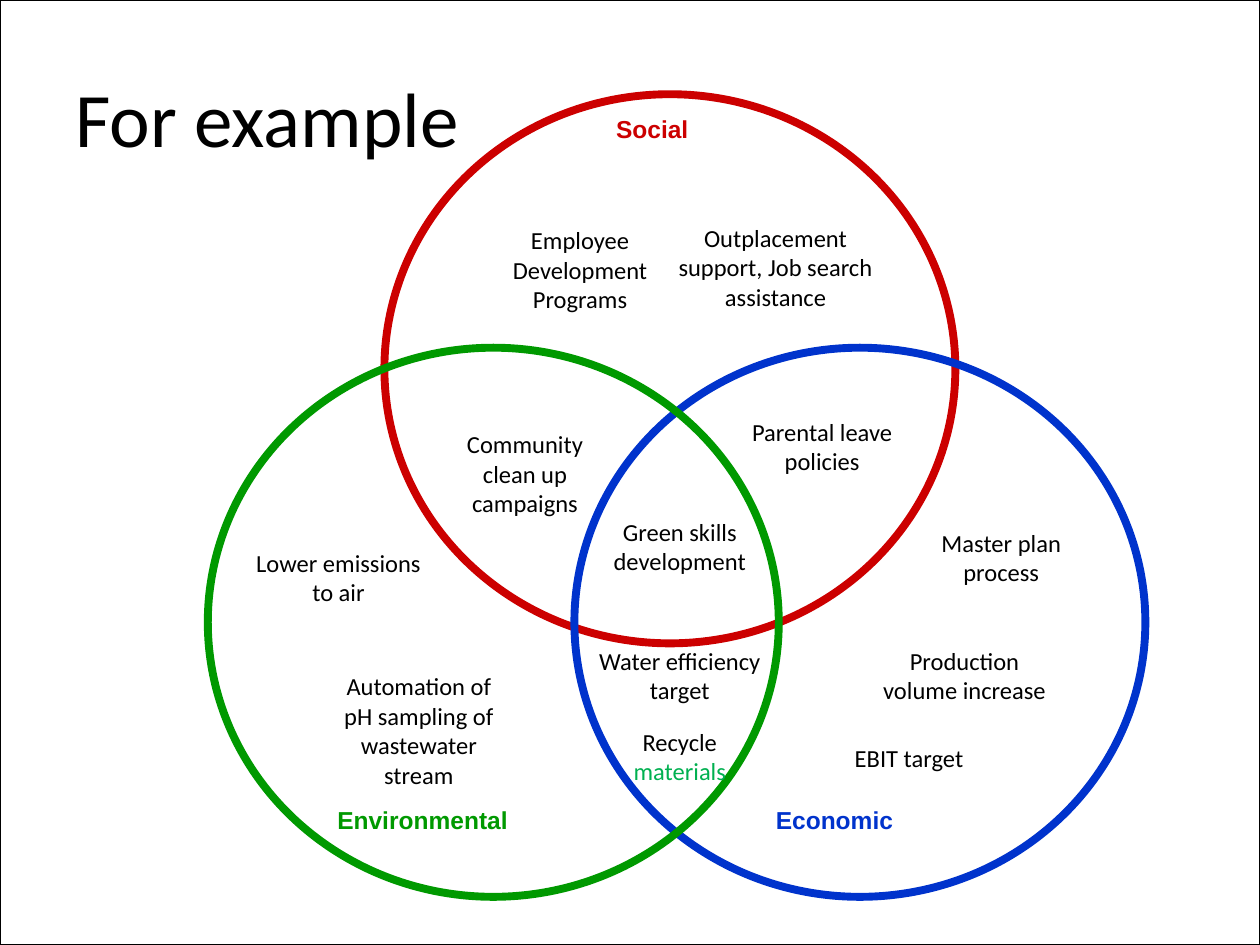
import pptx
import pptx.util
import pptx.dml.color
import pptx.enum.shapes
import pptx.enum.text

Cm, Pt = pptx.util.Cm, pptx.util.Pt
Kind = pptx.enum.shapes.MSO_SHAPE
Align = pptx.enum.text.PP_ALIGN

RINGS = [
    ("Social", "CC0000", (7.75, 1.9), (12.17, 2.18)),
    ("Economic", "0033CC", (11.58, 7.01), (15.39, 16.1)),
    ("Environmental", "009900", (4.19, 7.01), (6.55, 16.1)),
]
NOTES = [
    ("Water efficiency target", 11.71, 12.9, 3.99, 2),
    ("Employee Development Programs", 9.7, 4.42, 3.99, 3),
    ("EBIT target", 16.33, 14.86, 3.99, 1),
    ("Production volume increase", 17.45, 12.9, 3.99, 2),
    ("Master plan process", 18.19, 10.52, 3.99, 2),
    ("Parental leave policies", 14.58, 8.28, 3.99, 2),
    ("Recycle\nmaterials", 11.71, 14.53, 3.99, 2),
    ("Automation of pH sampling of wastewater stream", 6.45, 13.41, 3.99, 4),
    ("Outplacement support, Job search assistance", 13.31, 4.37, 4.65, 3),
    ("Community clean up campaigns", 8.59, 8.53, 3.99, 3),
    ("Green skills development", 11.71, 10.29, 3.99, 2),
    ("Lower emissions to air", 4.83, 10.92, 3.99, 2),
]
TINTS = {"materials": "00B050"}


def paint(part, tone):
    if hasattr(part, "solid"):
        part.solid()
        part = part.fore_color
    else:
        part = part.color
    part.rgb = pptx.dml.color.RGBColor.from_string(tone)


def outline(shapes, kind, box, tone, width):
    shape = shapes.add_shape(kind, *map(Cm, box))
    shape.shadow.inherit = False
    shape.fill.background()
    paint(shape.line, tone)
    shape.line.width = Pt(width)
    return shape


def write(shape, text, face, size, align, tone="000000", bold=False):
    frame = shape.text_frame
    frame.text = text
    frame.word_wrap = True
    for para in frame.paragraphs:
        para.alignment = align
        for run in para.runs:
            run.font.name = face
            run.font.size = Pt(size)
            run.font.bold = bold
            paint(run.font, TINTS.get(run.text, tone))


def main():
    deck = pptx.Presentation()
    deck.slide_width, deck.slide_height = Cm(25.4), Cm(19.05)
    slide = deck.slides.add_slide(deck.slide_layouts[5])
    shapes = slide.shapes

    title = shapes.title
    title.left, title.top, title.width, title.height = map(Cm, (1.27, 0.76, 22.86, 3.18))
    write(title, "For example", "Calibri", 44, Align.LEFT)
    title.text_frame.vertical_anchor = pptx.enum.text.MSO_ANCHOR.MIDDLE

    border = outline(shapes, Kind.RECTANGLE, (0, 0, 25.4, 19.05), "000000", 0.75)
    paint(border.fill, "FFFFFF")
    venn = shapes.add_group_shape()
    for name, tone, spot, tag in RINGS:
        outline(venn.shapes, Kind.OVAL, (*spot, 11.51, 11.07), tone, 4.5)
    for name, tone, spot, tag in RINGS:
        label = venn.shapes.add_textbox(*map(Cm, (*tag, 6.48, 0.79)))
        write(label, name, "Arial", 14, Align.LEFT, tone, True)
    for back in (border, venn):
        title.element.addprevious(back.element)

    for text, left, top, width, lines in NOTES:
        height = 0.86 + 0.6 * (lines - 1)
        note = shapes.add_textbox(*map(Cm, (left, top, width, height)))
        write(note, text, "Calibri", 14, Align.CENTER)

    deck.save("out.pptx")


if __name__ == "__main__":
    main()
